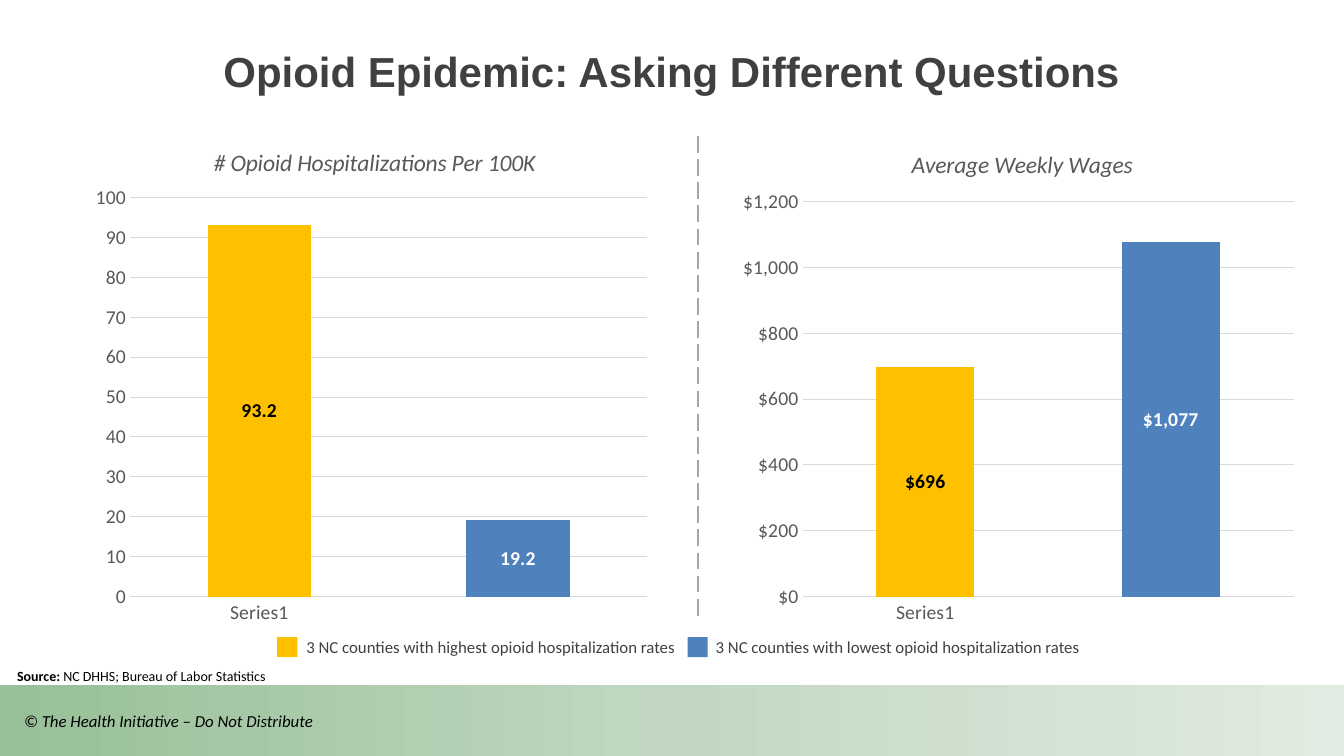
from copy import deepcopy
from dataclasses import dataclass
from typing import Any

from pptx import Presentation
from pptx.chart.data import CategoryChartData
from pptx.dml.color import RGBColor
from pptx.enum.chart import XL_CHART_TYPE, XL_LABEL_POSITION, XL_TICK_MARK
from pptx.enum.dml import MSO_LINE_DASH_STYLE
from pptx.enum.shapes import MSO_CONNECTOR, MSO_SHAPE
from pptx.enum.text import MSO_ANCHOR, MSO_AUTO_SIZE, PP_ALIGN
from pptx.oxml.ns import qn
from pptx.oxml.xmlchemy import OxmlElement
from pptx.util import Pt

STACKED = XL_CHART_TYPE.COLUMN_STACKED
LABEL_CENTER = XL_LABEL_POSITION.CENTER
NO_TICK = XL_TICK_MARK.NONE
LONG_DASH = MSO_LINE_DASH_STYLE.LONG_DASH
STRAIGHT = MSO_CONNECTOR.STRAIGHT
RECTANGLE = MSO_SHAPE.RECTANGLE
MIDDLE, TOP = MSO_ANCHOR.MIDDLE, MSO_ANCHOR.TOP
CENTER = PP_ALIGN.CENTER
GROW = MSO_AUTO_SIZE.SHAPE_TO_FIT_TEXT
TITLE_ONLY = 5

BLACK = RGBColor(0x00, 0x00, 0x00)
WHITE = RGBColor(0xFF, 0xFF, 0xFF)
DARK = RGBColor(0x40, 0x40, 0x40)
AXIS_GRAY = RGBColor(0x59, 0x59, 0x59)
GRID_GRAY = RGBColor(0xD9, 0xD9, 0xD9)
DIVIDER_GRAY = RGBColor(0xA6, 0xA6, 0xA6)
HIGHEST = RGBColor(0xFF, 0xC0, 0x00)
LOWEST = RGBColor(0x4F, 0x81, 0xBD)
BAND_COLORS = (RGBColor(0x98, 0xC0, 0x98), RGBColor(0xC1, 0xD7, 0xC1), RGBColor(0xE1, 0xEB, 0xE1))

EMU_PER_PX = 9144
SLIDE_W, SLIDE_H = 1333, 750
CHART_TOP, CHART_W, CHART_H = 121, 569, 510

BODY = {"name": "Calibri", "size": Pt(12), "bold": False, "italic": False}
HEADING = {"name": "Arial", "size": Pt(30), "bold": True}
CHART_TEXT = {**BODY, "size": Pt(14)}
CHART_TITLE = {**BODY, "size": Pt(16.8), "italic": True}
BAR_LABEL = {**CHART_TEXT, "bold": True}
SOURCE = {**BODY, "size": Pt(10)}


@dataclass(frozen=True)
class Box:
    left: int
    top: int
    width: int
    height: int

    def emu(self) -> tuple[int, ...]:
        return tuple(px(n) for n in (self.left, self.top, self.width, self.height))


@dataclass(frozen=True)
class Comparison:
    title: str
    left: int
    values: tuple[float, float]
    number_format: str
    axis_format: str
    axis_max: int
    axis_step: int
    title_at: tuple[int, int]
    plot: Box


@dataclass(frozen=True)
class LegendEntry:
    text: str
    color: RGBColor
    swatch_left: int
    text_left: int
    text_width: int


COMPARISONS = (
    Comparison("# Opioid Hospitalizations Per 100K", 83, (93.2, 19.2), "0.0", "0",
               100, 10, (125, 20), Box(46, 75, 513, 396)),
    Comparison("Average Weekly Wages", 725, (696, 1077), '"$"#,##0', '"$"#,##0',
               1200, 200, (175, 22), Box(71, 79, 487, 392)),
)
LEGEND = (
    LegendEntry("3 NC counties with highest opioid hospitalization rates", HIGHEST, 275, 294, 534),
    LegendEntry("3 NC counties with lowest opioid hospitalization rates", LOWEST, 682, 700, 527),
)


def px(length: int) -> int:
    return length * EMU_PER_PX


def apply(target: Any, values: dict[str, Any]) -> None:
    for attribute, value in values.items():
        setattr(target, attribute, value)


def style_font(font: Any, values: dict[str, Any], color: RGBColor) -> None:
    apply(font, values)
    font.color.rgb = color


def add_rect(slide: Any, box: Box, color: RGBColor) -> Any:
    rect = slide.shapes.add_shape(RECTANGLE, *box.emu())
    rect.shadow.inherit = False
    rect.fill.solid()
    rect.fill.fore_color.rgb = color
    rect.line.fill.background()
    return rect


def add_band(slide: Any) -> None:
    band = add_rect(slide, Box(0, 680, SLIDE_W, 70), BAND_COLORS[0])
    band.fill.gradient()
    band.fill.gradient_angle = 0
    stops = band.element.spPr.find(qn("a:gradFill")).find(qn("a:gsLst"))
    stops.insert(1, deepcopy(stops[0]))
    for stop, color, position in zip(band.fill.gradient_stops, BAND_COLORS, (0, 0.5, 1)):
        stop.color.rgb = color
        stop.position = position


def add_text(slide: Any, box: Box, runs: tuple[tuple[str, dict[str, Any]], ...],
             color: RGBColor, frame_format: dict[str, Any]) -> None:
    frame = slide.shapes.add_textbox(*box.emu()).text_frame
    apply(frame, {"word_wrap": True, "vertical_anchor": TOP, **frame_format})
    for text, values in runs:
        run = frame.paragraphs[0].add_run()
        run.text = text
        style_font(run.font, values, color)


def manual_layout(values: dict[str, Any]) -> Any:
    layout = OxmlElement("c:layout")
    manual = OxmlElement("c:manualLayout")
    layout.append(manual)
    for tag, value in values.items():
        entry = OxmlElement(f"c:{tag}")
        entry.set("val", str(value))
        manual.append(entry)
    return layout


def place_in_chart(parent: Any, index: int, values: dict[str, Any]) -> None:
    for existing in parent.findall(qn("c:layout")):
        parent.remove(existing)
    parent.insert(index, manual_layout(values))


def add_comparison(slide: Any, item: Comparison) -> None:
    data = CategoryChartData(number_format=item.number_format)
    data.categories = ["Series1", ""]
    data.add_series("Series 1", item.values)
    box = Box(item.left, CHART_TOP, CHART_W, CHART_H)
    chart = slide.shapes.add_chart(STACKED, *box.emu(), data).chart
    chart.has_legend = False
    style_font(chart.font, CHART_TEXT, BLACK)

    chart.has_title = True
    heading = chart.chart_title.text_frame
    heading.text = item.title
    style_font(heading.paragraphs[0].runs[0].font, CHART_TITLE, AXIS_GRAY)
    edges = {"xMode": "edge", "yMode": "edge"}
    title_left, title_top = item.title_at
    place_in_chart(chart.chart_title._element, 1, {
        **edges, "x": title_left / CHART_W, "y": title_top / CHART_H})
    place_in_chart(chart.element.find(".//" + qn("c:plotArea")), 0, {
        "layoutTarget": "inner", **edges,
        "x": item.plot.left / CHART_W, "y": item.plot.top / CHART_H,
        "w": item.plot.width / CHART_W, "h": item.plot.height / CHART_H})

    for axis in (chart.category_axis, chart.value_axis):
        apply(axis, {"major_tick_mark": NO_TICK, "minor_tick_mark": NO_TICK})
        style_font(axis.tick_labels.font, CHART_TEXT, AXIS_GRAY)
    amounts = chart.value_axis
    apply(amounts, {"minimum_scale": 0, "maximum_scale": item.axis_max,
                    "major_unit": item.axis_step, "has_major_gridlines": True})
    apply(amounts.tick_labels, {"number_format": item.axis_format,
                                "number_format_is_linked": False})
    amounts.format.line.fill.background()
    for line in (chart.category_axis.format.line, amounts.major_gridlines.format.line):
        line.color.rgb = GRID_GRAY
        line.width = Pt(0.75)

    plot = chart.plots[0]
    apply(plot, {"gap_width": 150, "overlap": 100, "vary_by_categories": False})
    bars = plot.series[0]
    for bar, color in ((bars, LOWEST), (bars.points[0], HIGHEST)):
        bar.format.fill.solid()
        bar.format.fill.fore_color.rgb = color
    labels = bars.data_labels
    apply(labels, {"show_value": True, "number_format": item.number_format,
                   "number_format_is_linked": False, "position": LABEL_CENTER})
    style_font(labels.font, BAR_LABEL, WHITE)
    highest_label = bars.points[0].data_label
    style_font(highest_label.font, BAR_LABEL, BLACK)
    highest_label.position = LABEL_CENTER


def add_divider(slide: Any) -> None:
    divider = slide.shapes.add_connector(STRAIGHT, px(692), px(135), px(692), px(615))
    divider.line.color.rgb = DIVIDER_GRAY
    apply(divider.line, {"width": Pt(1.5), "dash_style": LONG_DASH})
    divider.element.spPr.append(OxmlElement("a:effectLst"))


def main() -> None:
    deck = Presentation()
    apply(deck, {"slide_width": px(SLIDE_W), "slide_height": px(SLIDE_H)})
    slide = deck.slides.add_slide(deck.slide_layouts[TITLE_ONLY])
    add_band(slide)

    title = slide.shapes.title
    apply(title, dict(zip(("left", "top", "width", "height"), Box(0, 8, SLIDE_W, 125).emu())))
    title.text_frame.text = "Opioid Epidemic: Asking Different Questions"
    title.text_frame.vertical_anchor = MIDDLE
    title.text_frame.paragraphs[0].alignment = CENTER
    style_font(title.text_frame.paragraphs[0].runs[0].font, HEADING, DARK)

    for item in COMPARISONS:
        add_comparison(slide, item)
    add_text(slide, Box(14, 700, 344, 34),
             (("© The Health Initiative – Do Not Distribute", {**BODY, "italic": True}),), BLACK, {})
    add_divider(slide)
    for entry in LEGEND:
        add_rect(slide, Box(entry.swatch_left, 632, 20, 20), entry.color)
        add_text(slide, Box(entry.text_left, 627, entry.text_width, 30),
                 ((entry.text, BODY),), DARK, {"auto_size": GROW})
    no_margins = dict.fromkeys(("margin_left", "margin_top", "margin_right", "margin_bottom"), 0)
    add_text(slide, Box(17, 659, 724, 24),
             (("Source: ", {**SOURCE, "bold": True}), ("NC DHHS; Bureau of Labor Statistics", SOURCE)),
             BLACK, {**no_margins, "vertical_anchor": MIDDLE})
    deck.save("out.pptx")


if __name__ == "__main__":
    main()
